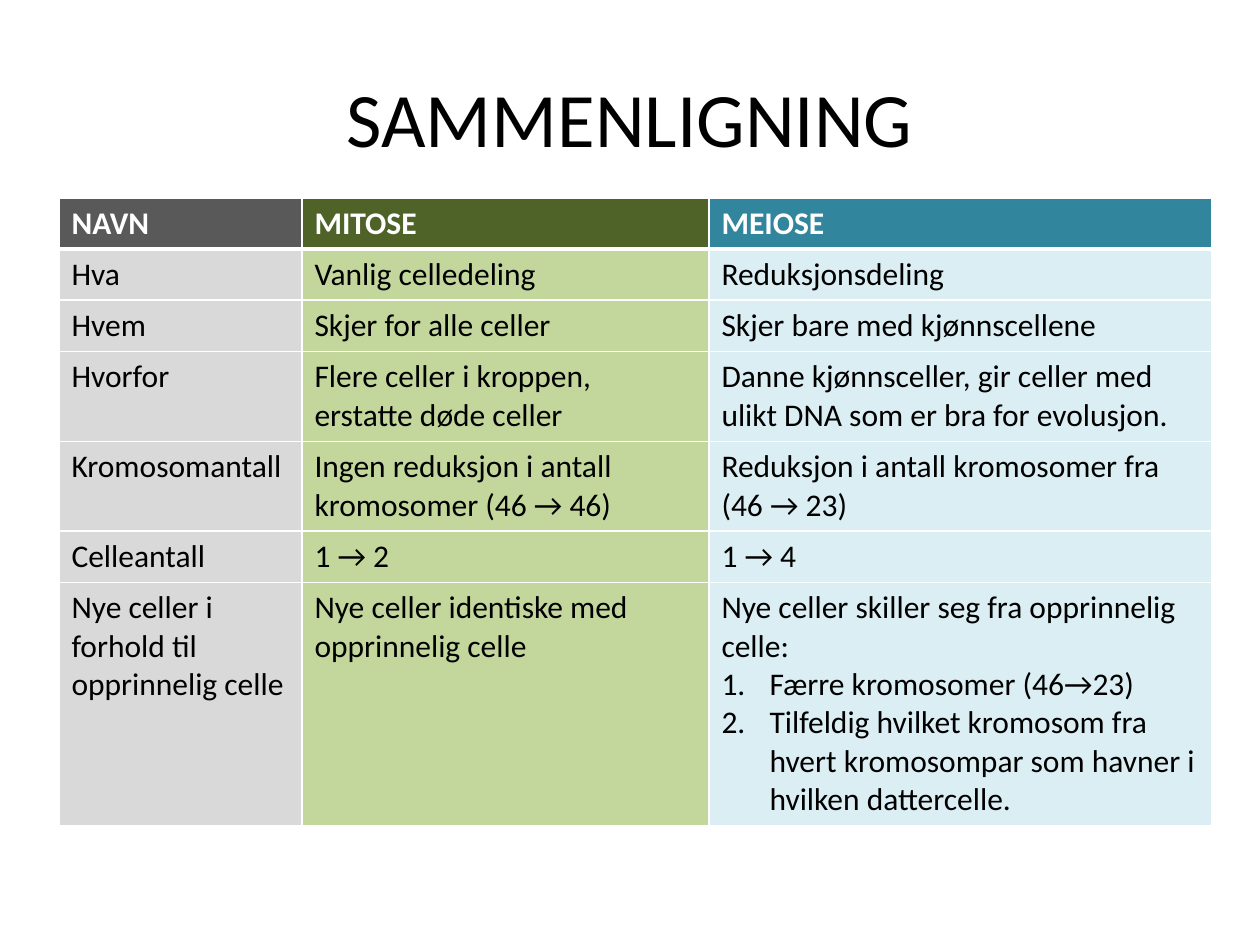
from lxml.etree import SubElement
from pptx import Presentation
from pptx.dml.color import RGBColor
from pptx.enum.text import MSO_ANCHOR as Anchor, PP_ALIGN as Align
from pptx.oxml.ns import qn
from pptx.util import Pt

DPI = 126
SCALE = 914400 / DPI
WHITE, BLACK = "FFFFFF", "000000"

HEADER_FILLS = ["595959", "4F6228", "31859C"]
BODY_FILLS = ["D9D9D9", "C3D69B", "DBEEF4"]
COLUMN_WIDTHS = [243, 407, 503]
ROW_HEIGHTS = [51, 51, 51, 90, 90, 51, 243]
LIST_INDENT = 48

TITLE_FORMAT = {"name": "Calibri", "size": Pt(44), "bold": False}
HEADER_FORMAT = {"name": "Calibri", "size": Pt(18), "bold": True}
BODY_FORMAT = {**HEADER_FORMAT, "bold": False}

ROWS = [
    ["NAVN", "MITOSE", "MEIOSE"],
    ["Hva", "Vanlig celledeling", "Reduksjonsdeling"],
    ["Hvem", "Skjer for alle celler", "Skjer bare med kjønnscellene"],
    ["Hvorfor", "Flere celler i kroppen, erstatte døde celler",
     "Danne kjønnsceller, gir celler med ulikt DNA som er bra for evolusjon."],
    ["Kromosomantall", "Ingen reduksjon i antall kromosomer (46 → 46)",
     "Reduksjon i antall kromosomer fra (46 → 23)"],
    ["Celleantall", "1 → 2", "1 → 4"],
    ["Nye celler i forhold til opprinnelig celle",
     "Nye celler identiske med opprinnelig celle",
     "Nye celler skiller seg fra opprinnelig celle:"],
]
DIFFERENCES = [
    "Færre kromosomer (46→23)",
    "Tilfeldig hvilket kromosom fra hvert kromosompar som havner i hvilken dattercelle.",
]


def px(length):
    return round(length * SCALE)


def color(value):
    return RGBColor.from_string(value)


def write(para, text, formats, ink):
    span = para.add_run()
    span.text = text
    for name, value in formats.items():
        setattr(span.font, name, value)
    span.font.color.rgb = color(ink)


def number(para):
    props = para._p.get_or_add_pPr()
    props.set("marL", str(px(LIST_INDENT)))
    props.set("indent", str(-px(LIST_INDENT)))
    SubElement(props, qn("a:buFont"), typeface="+mj-lt")
    SubElement(props, qn("a:buAutoNum"), type="arabicPeriod")


def draw_borders(cell, row):
    weights = {"lnL": 1, "lnR": 1,
               "lnT": 3 if row == 1 else 1,
               "lnB": 3 if row == 0 else 1}
    props = cell._tc.get_or_add_tcPr()
    for side, weight in weights.items():
        line = SubElement(props, qn(f"a:{side}"), w=str(Pt(weight)))
        fill = SubElement(line, qn("a:solidFill"))
        SubElement(fill, qn("a:srgbClr"), val=WHITE)


def add_title(page, left, top, width, height):
    title = page.shapes.title
    box = {"left": left, "top": top, "width": width, "height": height}
    for name, value in box.items():
        setattr(title, name, px(value))
    title.text_frame.vertical_anchor = Anchor.MIDDLE
    para = title.text_frame.paragraphs[0]
    para.alignment = Align.CENTER
    write(para, "SAMMENLIGNING", TITLE_FORMAT, BLACK)


def add_comparison(page, left, top):
    table = page.shapes.add_table(
        len(ROWS), len(COLUMN_WIDTHS), px(left), px(top),
        px(sum(COLUMN_WIDTHS)), px(sum(ROW_HEIGHTS))).table
    for column, width in zip(table.columns, COLUMN_WIDTHS):
        column.width = px(width)
    for row, height in zip(table.rows, ROW_HEIGHTS):
        row.height = px(height)
    for r, texts in enumerate(ROWS):
        header = r == 0
        fills = HEADER_FILLS if header else BODY_FILLS
        for c, text in enumerate(texts):
            cell = table.cell(r, c)
            draw_borders(cell, r)
            cell.fill.solid()
            cell.fill.fore_color.rgb = color(fills[c])
            write(cell.text_frame.paragraphs[0], text,
                  HEADER_FORMAT if header else BODY_FORMAT,
                  WHITE if header else BLACK)
    last_cell = table.cell(len(ROWS) - 1, len(COLUMN_WIDTHS) - 1)
    for text in DIFFERENCES:
        para = last_cell.text_frame.add_paragraph()
        number(para)
        write(para, text, BODY_FORMAT, BLACK)


def main():
    deck = Presentation()
    deck.slide_width, deck.slide_height = px(1260), px(945)
    page = deck.slides.add_slide(deck.slide_layouts[5])
    add_title(page, 63, 38, 1134, 158)
    add_comparison(page, 59, 198)
    deck.save("out.pptx")


if __name__ == "__main__":
    main()
